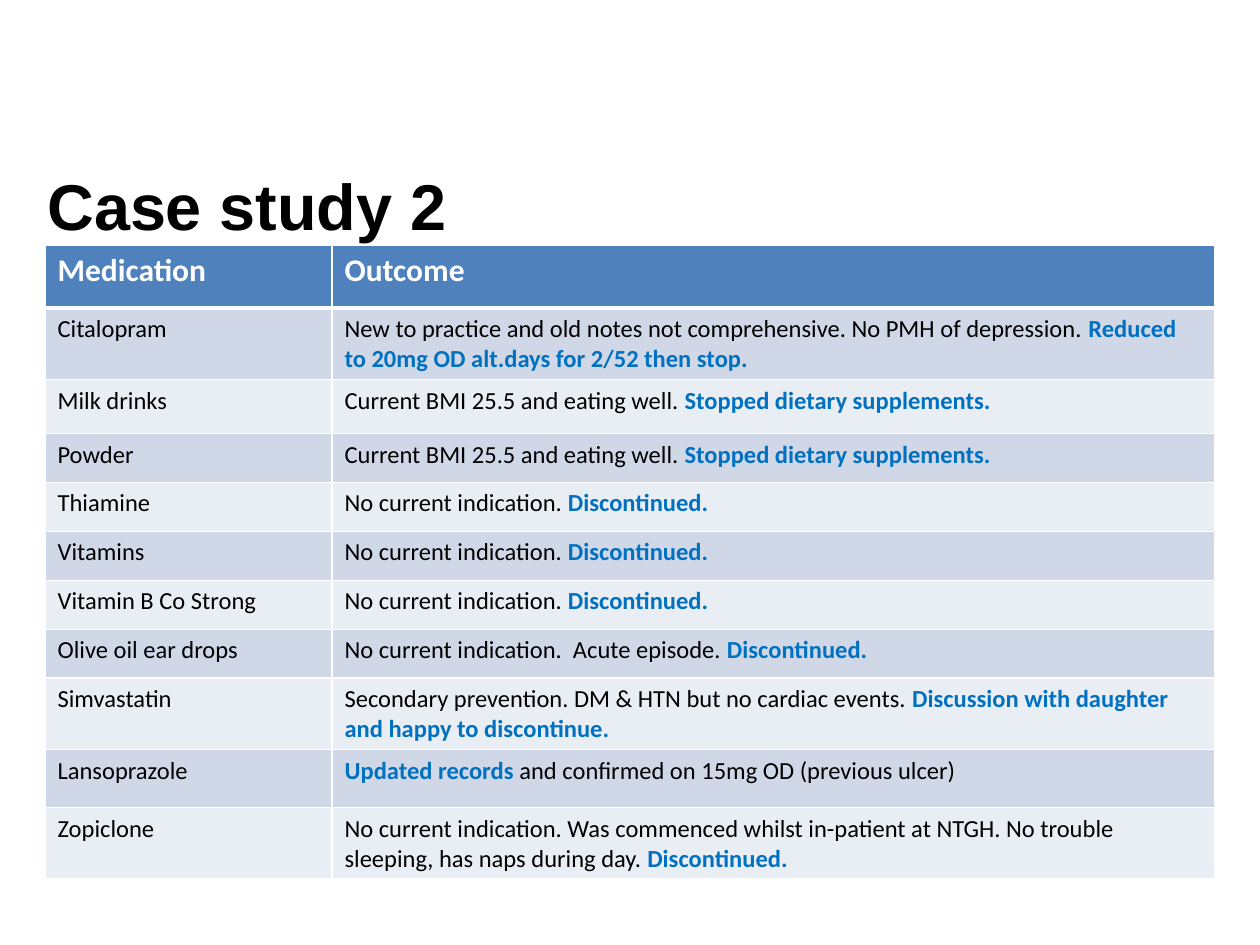
"""Build the medication review slide for case study 2."""
from lxml import etree
from pptx import Presentation
from pptx import util as u
from pptx.dml.color import RGBColor
from pptx.enum import text
from pptx.oxml import ns

PX = u.Inches(1) // 126
BLACK = RGBColor(0x00, 0x00, 0x00)
WHITE = RGBColor(0xFF, 0xFF, 0xFF)
HEADER = RGBColor(0x4F, 0x81, 0xBD)
BANDS = RGBColor(0xE9, 0xED, 0xF4), RGBColor(0xD0, 0xD8, 0xE8)
ACTION = RGBColor(0x00, 0x70, 0xC0)

COLUMNS = [287, 883]
STOPPED = ("No current indication. ", "*Discontinued.")
SUPPLEMENT = ("Current BMI 25.5 and eating well. ", "*Stopped dietary supplements.")
ROWS = [
    (63, "Citalopram", ("New to practice and old notes not comprehensive. No PMH of depression. ",
                        "*Reduced to 20mg OD alt.days for 2/52 then stop.")),
    (54, "Milk drinks", SUPPLEMENT),
    (49, "Powder", SUPPLEMENT),
    (49, "Thiamine", STOPPED),
    (49, "Vitamins", STOPPED),
    (49, "Vitamin B Co Strong", STOPPED),
    (49, "Olive oil ear drops", ("No current indication.  Acute episode. ", "*Discontinued.")),
    (63, "Simvastatin", ("Secondary prevention. DM & HTN but no cardiac events. ",
                         "*Discussion with daughter and happy to discontinue.")),
    (58, "Lansoprazole", ("*Updated records ", "and confirmed on 15mg OD (previous ulcer)")),
    (58, "Zopiclone", ("No current indication. Was commenced whilst in-patient at NTGH. "
                       "No trouble sleeping, has naps during day. ", "*Discontinued.")),
]


def add_run(p, content, size=14, font="Calibri", color=BLACK, bold=False):
    """Append a formatted run to a paragraph."""
    r = p.add_run()
    r.text = content
    r.font.size = u.Pt(size)
    r.font.name = font
    r.font.color.rgb = color
    r.font.bold = bold


def add_title(s, content):
    """Add the slide title."""
    tf = s.shapes.add_textbox(35 * PX, 155 * PX, 1191 * PX, 100 * PX).text_frame
    tf.word_wrap = True
    tf.vertical_anchor = text.MSO_ANCHOR.MIDDLE
    add_run(tf.paragraphs[0], content, size=37, font="Arial", bold=True)


def set_borders(cell, **widths):
    """Draw white borders, 1 pt unless a width is given for a side."""
    tc_pr = cell._tc.get_or_add_tcPr()
    for side in "LRTB":
        ln = etree.SubElement(tc_pr, ns.qn(f"a:ln{side}"), w=str(u.Pt(widths.get(side, 1))))
        fill = etree.SubElement(ln, ns.qn("a:solidFill"))
        etree.SubElement(fill, ns.qn("a:srgbClr"), val=str(WHITE))


def fill_cell(cell, parts, fill, borders, **style):
    """Write a cell, showing parts that start with * as actions."""
    set_borders(cell, **borders)
    cell.fill.solid()
    cell.fill.fore_color.rgb = fill
    p = cell.text_frame.paragraphs[0]
    for part in parts:
        if part.startswith("*"):
            add_run(p, part[1:], color=ACTION, bold=True)
        else:
            add_run(p, part, **style)


def add_medications(s):
    """Add the table of medications and outcomes."""
    heights = [63] + [row[0] for row in ROWS]
    table = s.shapes.add_table(len(heights), len(COLUMNS), 45 * PX, 245 * PX,
                               sum(COLUMNS) * PX, sum(heights) * PX).table
    for column, width in zip(table.columns, COLUMNS):
        column.width = width * PX
    for row, height in zip(table.rows, heights):
        row.height = height * PX
    for cell, label in zip(table.rows[0].cells, ("Medication", "Outcome")):
        fill_cell(cell, [label], HEADER, {"B": 3}, size=18, color=WHITE, bold=True)
    for i, (_, name, outcome) in enumerate(ROWS, 1):
        borders = {"T": 3} if i == 1 else {}
        for cell, parts in zip(table.rows[i].cells, ([name], outcome)):
            fill_cell(cell, parts, BANDS[i % 2], borders)


def main():
    """Build and save the slide."""
    prs = Presentation()
    prs.slide_width = 1260 * PX
    prs.slide_height = 945 * PX
    s = prs.slides.add_slide(prs.slide_layouts[6])
    add_title(s, "Case study 2")
    add_medications(s)
    prs.save("out.pptx")


if __name__ == "__main__":
    main()
